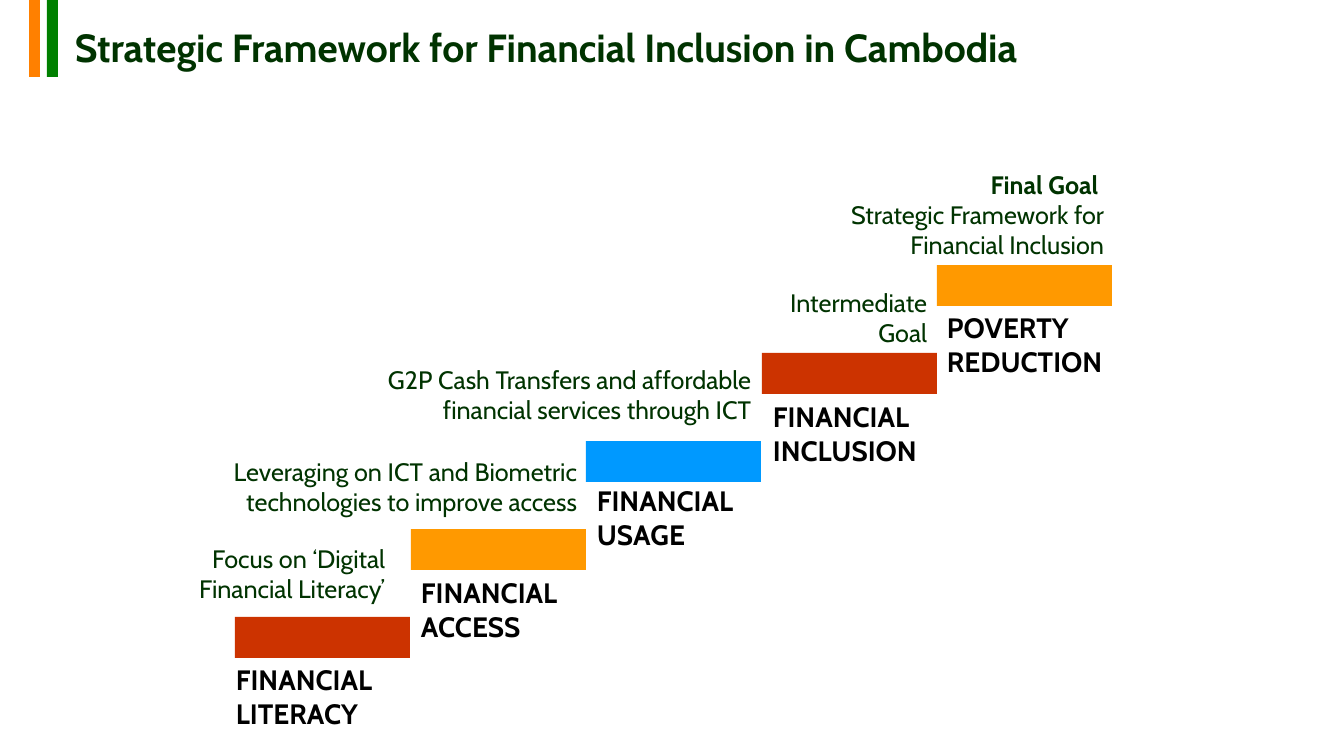
from pptx import Presentation
from pptx.dml.color import RGBColor
from pptx.enum.shapes import MSO_SHAPE
from pptx.enum.text import MSO_ANCHOR, PP_ALIGN
from pptx.util import Pt

RECTANGLE = MSO_SHAPE.RECTANGLE
TOP, MIDDLE = MSO_ANCHOR.TOP, MSO_ANCHOR.MIDDLE
LEFT, RIGHT = PP_ALIGN.LEFT, PP_ALIGN.RIGHT

PX = 914400 / 100.8
FONT = "Cabin"
COLORS = {
    "saffron": "FF8000",
    "green": "008000",
    "dark green": "003300",
    "black": "000000",
    "red": "CC3300",
    "orange": "FF9900",
    "blue": "0099FF",
}

deck = Presentation()
deck.slide_width, deck.slide_height = round(1344 * PX), round(756 * PX)
slide = deck.slides.add_slide(deck.slide_layouts[6])


def add_bar(left, top, width, height, color):
    bar = slide.shapes.add_shape(
        RECTANGLE, *(round(v * PX) for v in (left, top, width, height)))
    bar.shadow.inherit = False
    bar.fill.solid()
    bar.fill.fore_color.rgb = RGBColor.from_string(COLORS[color])
    bar.line.fill.background()


def add_text(text, left, top, width, height, size=18, color="dark green",
             bold_lines=0, align=LEFT, anchor=TOP, spacing=None):
    box = slide.shapes.add_textbox(
        *(round(v * PX) for v in (left, top, width, height)))
    frame = box.text_frame
    frame.word_wrap = True
    frame.vertical_anchor = anchor
    frame.text = text
    for number, paragraph in enumerate(frame.paragraphs):
        paragraph.alignment = align
        paragraph.line_spacing = spacing
        font = paragraph.runs[0].font
        font.name, font.size = FONT, Pt(size)
        font.bold = number < bold_lines
        font.color.rgb = RGBColor.from_string(COLORS[color])


# Title with its two stripes
add_bar(29, 0, 11, 77, "saffron")
add_bar(47, 0, 11, 77, "green")
add_text("Strategic Framework for Financial Inclusion in Cambodia",
         65, 22, 1278, 55, size=28, bold_lines=1, anchor=MIDDLE, spacing=0.9)

# Staircase: colour, name, left and top of the name
STEP_WIDTH, STEP_RISE = 175.6, 88
steps = [
    ("red", "FINANCIAL LITERACY", 226, 658),
    ("orange", "FINANCIAL ACCESS", 411, 571),
    ("blue", "FINANCIAL USAGE", 587, 479),
    ("red", "FINANCIAL INCLUSION", 763, 395),
    ("orange", "POVERTY REDUCTION", 937, 306),
]
for i, (color, name, name_left, name_top) in enumerate(steps):
    add_bar(235 + round(i * STEP_WIDTH), 617 - i * STEP_RISE, 175, 41, color)
    add_text(name, name_left, name_top, 215, 78,
             size=20, color="black", bold_lines=1)

# Notes above the steps: text, right edge, top, width, height, bold lines
notes = [
    ("Focus on ‘Digital Financial Literacy’", 395, 538, 285, 72, 0),
    ("Leveraging on ICT and Biometric technologies to improve access",
     587, 451, 410, 72, 0),
    ("G2P Cash Transfers and affordable financial services through ICT",
     761, 359, 410, 72, 0),
    ("Intermediate Goal", 937, 282, 200, 72, 0),
    ("Final Goal \nStrategic Framework for Financial Inclusion",
     1114, 164, 329, 132, 1),
]
for text, right, top, width, height, bold_lines in notes:
    add_text(text, right - width, top, width, height,
             bold_lines=bold_lines, align=RIGHT)

deck.save("out.pptx")
